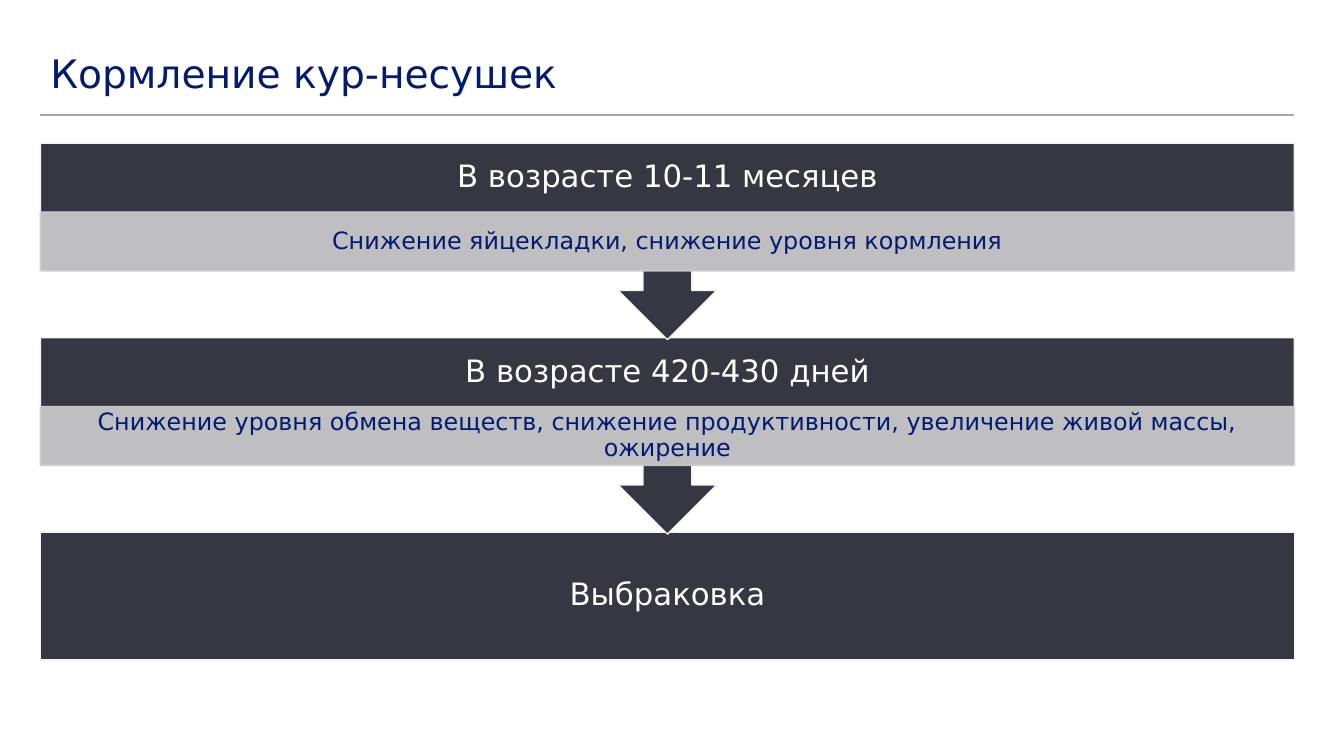
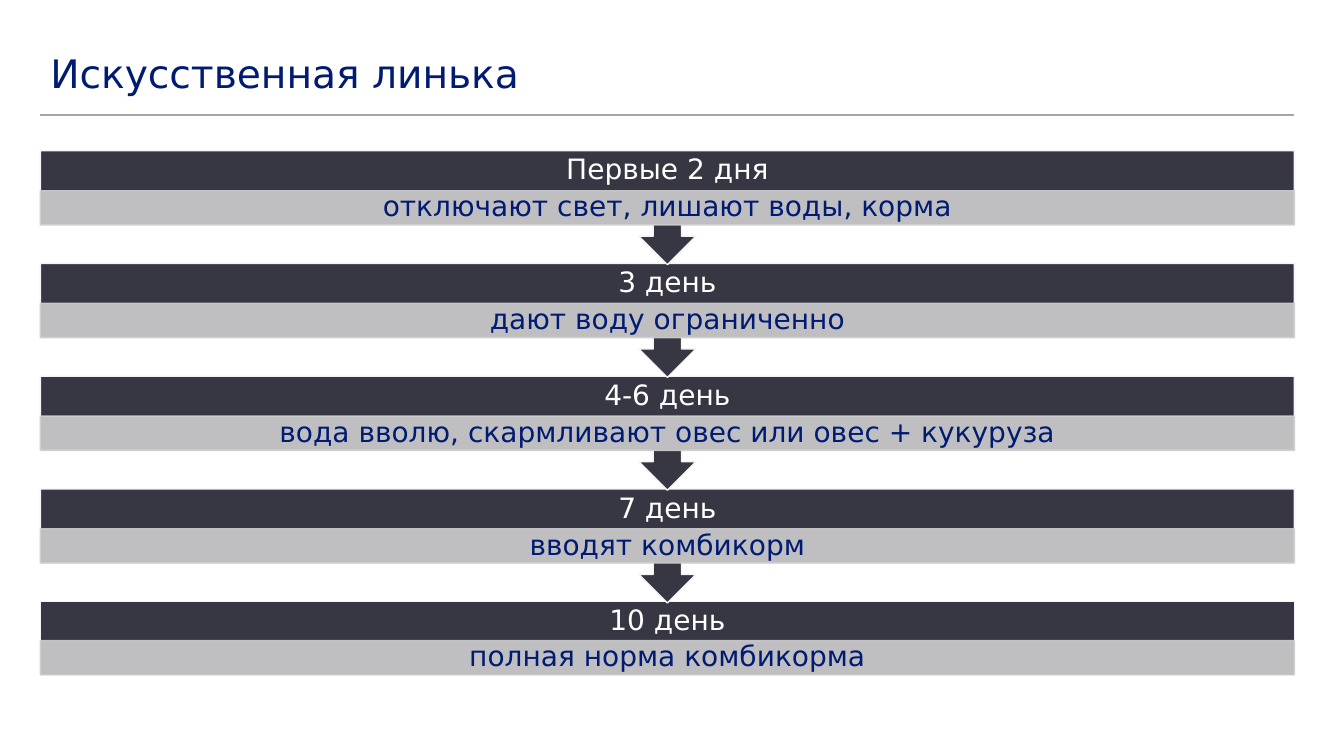
from dataclasses import dataclass

from lxml import etree
from pptx import Presentation, util as u
from pptx.dml.color import RGBColor
from pptx.enum import shapes, text
from pptx.oxml.ns import qn


@dataclass(frozen=True)
class Theme:
    font: str = "DejaVu Sans"
    navy: str = "001B71"
    dark: str = "373743"
    edge: str = "F4F4F6"
    pale: str = "CECECF"
    rule: str = "A6A6A6"
    white: str = "FFFFFF"
    title_size: int = 28
    line_width: int = 1
    pale_opacity: int = 90
    line_spacing: float = 0.9


THEME = Theme()
LEFT, WIDTH = 1.02, 31.6
TITLE_TOP, TITLE_HEIGHT, RULE_TOP = 1.14, 1.52, 2.9

# Shares of one callout's height
BODY, HEADING, LAST_HEADING, DETAIL, PITCH = 0.65, 0.35, 0.34, 0.3, 0.99

SLIDES = [
    {
        "title": "Кормление кур-несушек",
        "top": 3.61, "callout_height": 4.95,
        "heading_size": 22, "detail_size": 17, "inset": 0.33,
        "steps": [
            ("В возрасте 10-11 месяцев", "Снижение яйцекладки, снижение уровня кормления"),
            ("В возрасте 420-430 дней", "Снижение уровня обмена веществ, снижение "
             "продуктивности, увеличение живой массы, ожирение"),
            ("Выбраковка", None),
        ],
    },
    {
        "title": "Искусственная линька",
        "top": 3.8, "callout_height": 2.87,
        "heading_size": 20, "detail_size": 20, "inset": 0.41,
        "steps": [
            ("Первые 2 дня", "отключают свет, лишают воды, корма"),
            ("3 день", "дают воду ограниченно"),
            ("4-6 день", "вода вволю, скармливают овес или овес + кукуруза"),
            ("7 день", "вводят комбикорм"),
            ("10 день", "полная норма комбикорма"),
        ],
    },
]


def write(shape, words, size, color, align, inset=0.25, bottom=0):
    frame = shape.text_frame
    frame.word_wrap = True
    frame.vertical_anchor = text.MSO_ANCHOR.MIDDLE
    frame.margin_left = frame.margin_right = u.Cm(inset)
    frame.margin_top, frame.margin_bottom = 0, u.Cm(bottom)
    paragraph = frame.paragraphs[0]
    paragraph.alignment = align
    paragraph.line_spacing = THEME.line_spacing
    run = paragraph.add_run()
    run.text = words
    run.font.name = THEME.font
    run.font.size = u.Pt(size)
    run.font.color.rgb = RGBColor.from_string(color)


def add_block(slide, kind, top, height, fill, edge, opacity=100):
    """Add a full-width shape, with the same opacity for fill and outline."""
    shape = slide.shapes.add_shape(kind, u.Cm(LEFT), u.Cm(top), u.Cm(WIDTH), u.Cm(height))
    shape.shadow.inherit = False
    shape.fill.solid()
    shape.fill.fore_color.rgb = RGBColor.from_string(fill)
    shape.line.color.rgb = RGBColor.from_string(edge)
    shape.line.width = u.Pt(THEME.line_width)
    if opacity < 100:
        for color in shape.element.spPr.iter(qn("a:srgbClr")):
            etree.SubElement(color, qn("a:alpha"), val=str(opacity * 1000))
    return shape


def add_steps(slide, content):
    """Stack the steps from the bottom up, so each arrow tip overlaps the next step."""
    unit, steps = content["callout_height"], content["steps"]
    center = text.PP_ALIGN.CENTER
    for index in reversed(range(len(steps))):
        heading, detail = steps[index]
        top = content["top"] + index * PITCH * unit
        is_last = index == len(steps) - 1
        kind = shapes.MSO_SHAPE.RECTANGLE if is_last else shapes.MSO_SHAPE.DOWN_ARROW_CALLOUT
        block = add_block(slide, kind, top, unit * (BODY if is_last else 1),
                          THEME.dark, THEME.edge)
        write(block, heading, content["heading_size"], THEME.white, center,
              content["inset"], bottom=DETAIL * unit if detail else 0)
        if detail:
            detail_top = top + unit * (LAST_HEADING if is_last else HEADING)
            band = add_block(slide, shapes.MSO_SHAPE.RECTANGLE, detail_top, DETAIL * unit,
                             THEME.pale, THEME.pale, THEME.pale_opacity)
            write(band, detail, content["detail_size"], THEME.navy, center, content["inset"])


def place_title(title):
    title.left, title.top = u.Cm(LEFT), u.Cm(TITLE_TOP)
    title.width, title.height = u.Cm(WIDTH), u.Cm(TITLE_HEIGHT)


def add_layout_rule(slide, layout):
    """Draw the title rule and move it to the layout that all slides share."""
    rule = slide.shapes.add_connector(
        shapes.MSO_CONNECTOR.STRAIGHT,
        u.Cm(LEFT), u.Cm(RULE_TOP), u.Cm(LEFT + WIDTH), u.Cm(RULE_TOP))
    rule.line.color.rgb = RGBColor.from_string(THEME.rule)
    rule.line.width = u.Pt(THEME.line_width)
    etree.SubElement(rule.element.spPr, qn("a:effectLst"))
    layout.shapes.element.append(rule.element)


def main():
    presentation = Presentation()
    presentation.slide_width, presentation.slide_height = u.Cm(33.87), u.Cm(19.05)
    layout = presentation.slide_layouts.get_by_name("Title Only")
    place_title(layout.placeholders[0])
    for number, content in enumerate(SLIDES):
        slide = presentation.slides.add_slide(layout)
        if number == 0:
            add_layout_rule(slide, layout)
        write(slide.shapes.title, content["title"], THEME.title_size, THEME.navy,
              text.PP_ALIGN.LEFT)
        add_steps(slide, content)
    presentation.save("out.pptx")


if __name__ == "__main__":
    main()
